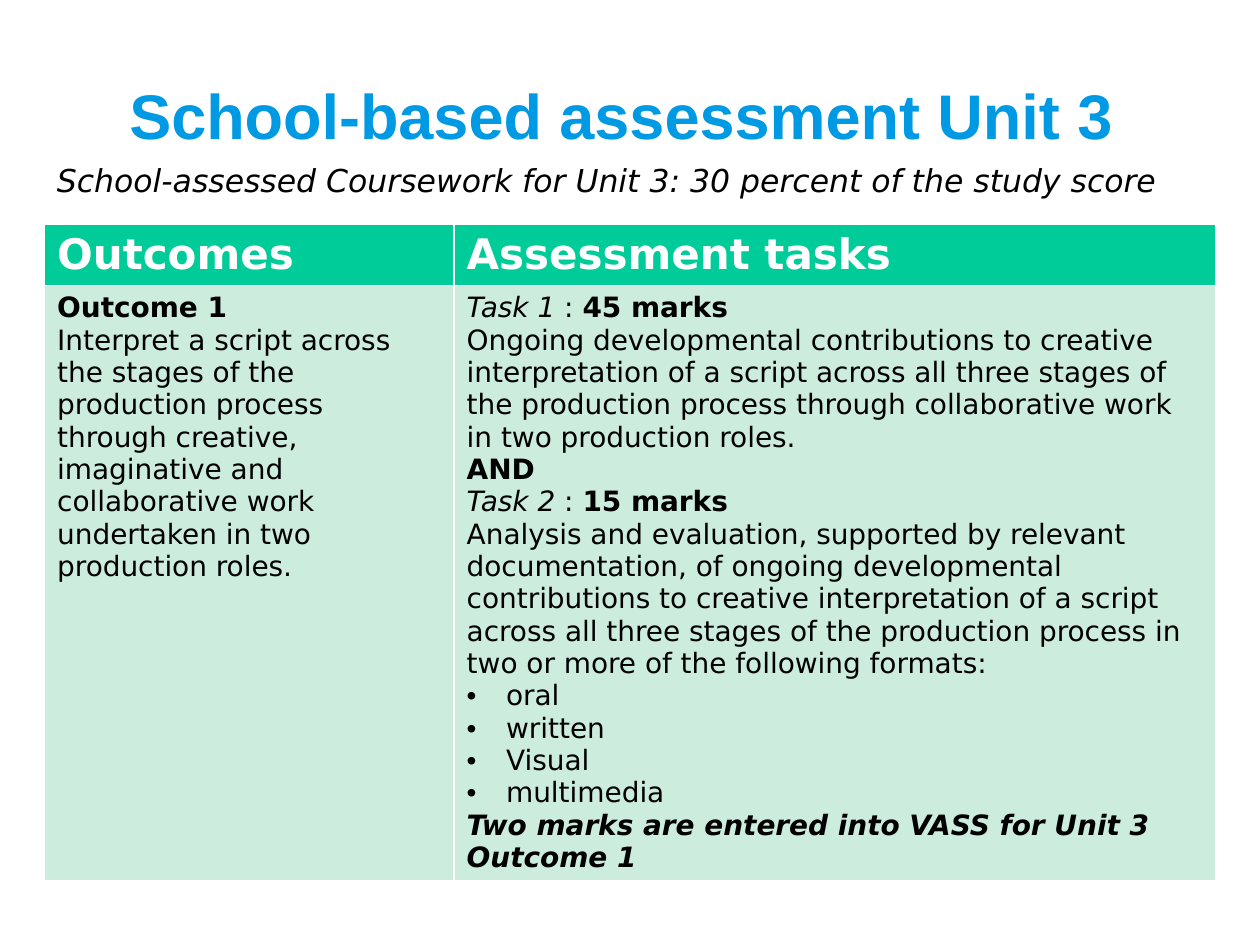
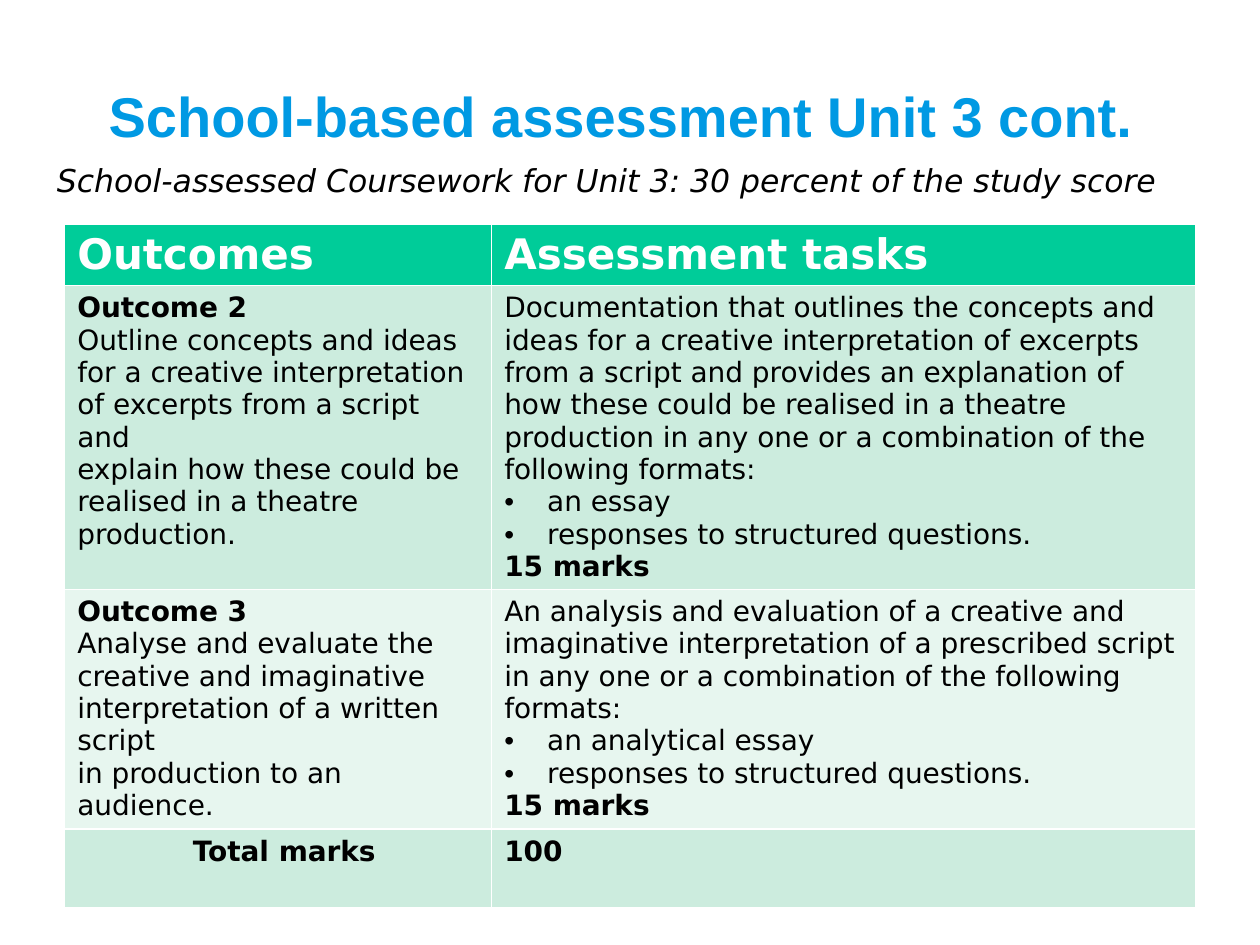
from lxml.etree import SubElement
from pptx import Presentation
from pptx.dml.color import RGBColor as RGB
from pptx.enum.text import MSO_ANCHOR as Anchor, MSO_AUTO_SIZE as Fit, PP_ALIGN as Align
from pptx.oxml.ns import qn
from pptx.util import Pt

HUES = {"title": "0099E3", "head": "00CC99", "odd": "CCECDE", "even": "E7F6EF",
        "white": "FFFFFF", "ink": "000000"}
BODY = "DejaVu Sans"
NOTE = "School-assessed Coursework for Unit 3: 30 percent of the study score"
HEADS = [[("b", "Outcomes")], [("b", "Assessment tasks")]]


def style(font, size, hue, name=BODY, marks=""):
    font.name, font.size = name, Pt(size)
    font.color.rgb = RGB.from_string(HUES[hue])
    font.bold, font.italic = "b" in marks, "i" in marks


def write(cell, lines, size, hue, step):
    """Fill a cell; marks are b bold, i italic, * bullet, > indent.

    A line is (marks, text), or a list of such pairs for mixed runs.
    """
    frame = cell.text_frame
    for n, line in enumerate(lines):
        para = frame.add_paragraph() if n else frame.paragraphs[0]
        mixed = isinstance(line, list)
        marks = "" if mixed else line[0]
        props = para._p.get_or_add_pPr()
        if "*" in marks:
            props.set("marL", str(Pt(step)))
            props.set("indent", str(-Pt(step)))
            SubElement(props, qn("a:buFont"), typeface="Arial")
            SubElement(props, qn("a:buChar"), char="•")
        elif ">" in marks:
            props.set("marL", str(Pt(66)))
        style(para.font, size, hue, marks=marks)
        for mark, text in line if mixed else [line]:
            run = para.add_run()
            run.text = text
            if mixed:
                run.font.bold, run.font.italic = "b" in mark, "i" in mark


unit = [
    [
        [("b", "Outcome 1"),
         ("", "Interpret a script across the stages of the production process through "
              "creative, imaginative and collaborative work undertaken in two "
              "production roles.")],
        [[("i", "Task 1"), ("", " : "), ("b", "45 marks")],
         ("", "Ongoing developmental contributions to creative interpretation of a "
              "script across all three stages of the production process through "
              "collaborative work in two production roles."),
         ("b", "AND"),
         [("i", "Task 2"), ("", " : "), ("b", "15 marks")],
         ("", "Analysis and evaluation, supported by relevant documentation, of ongoing "
              "developmental contributions to creative interpretation of a script "
              "across all three stages of the production process in two or more of "
              "the following formats:"),
         ("*", "oral"),
         ("*", "written"),
         ("*", "Visual"),
         ("*", "multimedia"),
         ("bi", "Two marks are entered into VASS for Unit 3 Outcome 1")],
    ],
]
cont = [
    [
        [("b", "Outcome 2"),
         ("", "Outline concepts and ideas for a creative interpretation of excerpts "
              "from a script and"),
         ("", "explain how these could be realised in a theatre production.")],
        [("", "Documentation that outlines the concepts and ideas for a creative "
              "interpretation of excerpts from a script and provides an explanation "
              "of how these could be realised in a theatre production in any one or "
              "a combination of the following formats:"),
         ("*", "an essay"),
         ("*", "responses to structured questions."),
         ("b", "15 marks")],
    ],
    [
        [("b", "Outcome 3"),
         ("", "Analyse and evaluate the creative and imaginative interpretation of a "
              "written script"),
         ("", "in production to an audience.")],
        [("", "An analysis and evaluation of a creative and imaginative interpretation "
              "of a prescribed script in any one or a combination of the following "
              "formats:"),
         ("*", "an analytical essay"),
         ("*", "responses to structured questions."),
         ("b", "15 marks")],
    ],
    [[("b>", "Total marks")], [("b", "100")]],
]
# title, title size, table left, column widths, row heights, bullet step, rows
pages = [
    ("School-based assessment Unit 3", 36, 25.5, (234, 435), (33, 333), 22.5, unit),
    ("School-based assessment Unit 3 cont.", 32, 37, (244, 402.5),
     (33, 173, 137, 45), 24.5, cont),
]

deck = Presentation()
deck.slide_width, deck.slide_height = Pt(720), Pt(540)

for name, size, left, widths, heights, step, rows in pages:
    slide = deck.slides.add_slide(deck.slide_layouts[5])

    title = slide.shapes.title
    title.left, title.top, title.width, title.height = Pt(37), Pt(26), Pt(636), Pt(79)
    frame = title.text_frame
    frame.text = name
    frame.auto_size, frame.vertical_anchor = Fit.NONE, Anchor.MIDDLE
    frame.paragraphs[0].alignment = Align.CENTER
    style(frame.paragraphs[0].font, size, "title", "Arial", "b")

    grid = slide.shapes.add_table(len(heights), 2, Pt(left), Pt(128),
                                  Pt(sum(widths)), Pt(sum(heights))).table
    for col, width in zip(grid.columns, widths):
        col.width = Pt(width)
    for r, (height, cells) in enumerate(zip(heights, [HEADS] + rows)):
        grid.rows[r].height = Pt(height)
        fill = "head" if r == 0 else "odd" if r % 2 else "even"
        for c, lines in enumerate(cells):
            cell = grid.cell(r, c)
            cell.fill.solid()
            cell.fill.fore_color.rgb = RGB.from_string(HUES[fill])
            write(cell, lines, 16 if r else 24, "ink" if r else "white", step)

    note = slide.shapes.add_textbox(Pt(14.5), Pt(88.5), Pt(663), Pt(29)).text_frame
    note.word_wrap = True
    note.margin_left = Pt(18)
    note.text = NOTE
    style(note.paragraphs[0].font, 18, "ink", marks="i")

deck.save("out.pptx")
